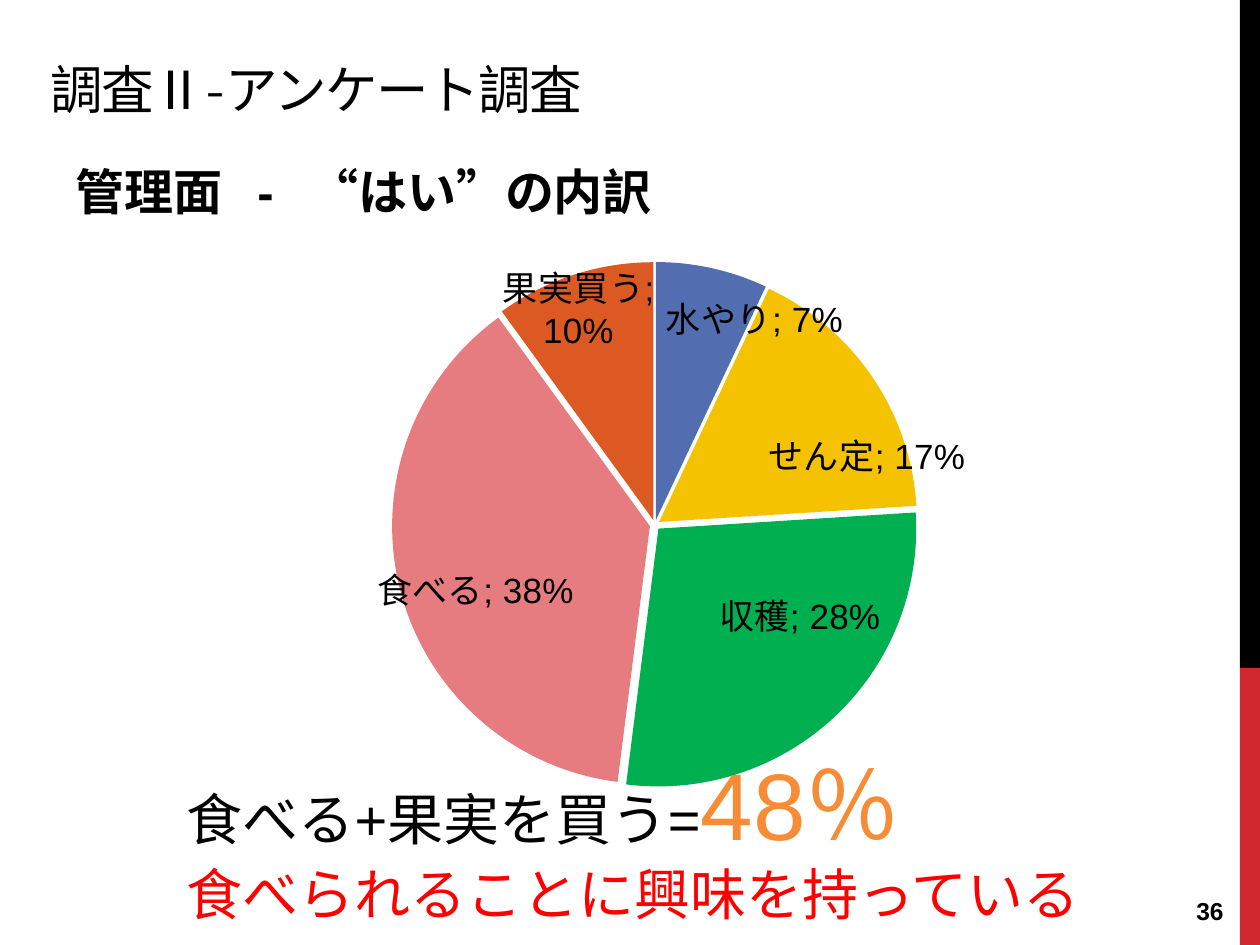
"""Build the survey slide with a pie chart of the "yes" answers."""
from lxml.etree import SubElement
from pptx import Presentation
from pptx.chart.data import CategoryChartData
from pptx.dml.color import RGBColor
from pptx.enum.chart import XL_CHART_TYPE, XL_LABEL_POSITION
from pptx.enum.shapes import MSO_SHAPE
from pptx.enum.text import MSO_ANCHOR, PP_ALIGN
from pptx.oxml import parse_xml
from pptx.oxml.ns import nsdecls, qn
from pptx.util import Pt

PX = 914400 // 126
COLORS = {
    "black": "000000", "crimson": "D1282E", "red": "FF0000", "orange": "F68D36",
    "blue": "526DB0", "yellow": "F5C201", "green": "00B050",
    "pink": "E67C7F", "rust": "DC5924",
}
BARS = [("black", 0, 668), ("crimson", 668, 277)]
BAR_LEFT, BAR_WIDTH = 1240, 20
CHART_BOX = (105, 155, 1081, 668)
PIE_BOX = (392, 262, 526, 526)
SLICES = [
    ("水やり", 7, "blue", (-48, 82)),
    ("せん定", 17, "yellow", (-110, 107)),
    ("収穫", 28, "green", (-121, -133)),
    ("食べる", 38, "pink", (181, -29)),
    ("果実買う", 10, "rust", (83, 84)),
]
TITLE = [[("調査Ⅱ-アンケート調査", 30, "black")]]
SUBTITLE = [[("管理面\t-\t“はい”の内訳", 28, "black")]]
SUBTITLE_TABS = (182, 234)
SUMMARY = [
    [("食べる+果実を買う=", 32, "black"), ("48％", 54, "orange")],
    [("食べられることに興味を持っている", 32, "red")],
]
PAGE_NUMBER = [[("36", 14, "black")]]


def scaled(*lengths):
    return [length * PX for length in lengths]


def color(name):
    return RGBColor.from_string(COLORS[name])


def add_text(page, place, lines, font="Arial", bold=False,
             anchor=MSO_ANCHOR.TOP, align=PP_ALIGN.LEFT, tabs=()):
    frame = page.shapes.add_textbox(*scaled(*place)).text_frame
    frame.word_wrap = True
    frame.vertical_anchor = anchor
    for index, line in enumerate(lines):
        para = frame.add_paragraph() if index else frame.paragraphs[0]
        para.alignment = align
        if tabs:
            stops = SubElement(para._p.get_or_add_pPr(), qn("a:tabLst"))
            for stop in tabs:
                SubElement(stops, qn("a:tab"), pos=str(stop * PX), algn="l")
        para.font.name = font
        para.font.bold = bold
        for text, size, name in line:
            span = para.add_run()
            span.text = text
            span.font.size = Pt(size)
            span.font.color.rgb = color(name)
    return frame


def layout_xml(x, y, w=None, h=None):
    parts = ""
    if w is not None:
        parts = '<c:layoutTarget val="inner"/><c:xMode val="edge"/><c:yMode val="edge"/>'
    for tag, value in zip("xywh", (x, y, w, h)):
        if value is not None:
            parts += f'<c:{tag} val="{value:.4f}"/>'
    return parse_xml(f'<c:layout {nsdecls("c")}><c:manualLayout>{parts}'
                     '</c:manualLayout></c:layout>')


def add_pie(page):
    data = CategoryChartData()
    data.categories = [name for name, *_ in SLICES]
    data.add_series("Series 1", [value for _, value, *_ in SLICES])
    chart = page.shapes.add_chart(XL_CHART_TYPE.PIE, *scaled(*CHART_BOX), data).chart
    chart.has_legend = False
    chart.has_title = False
    chart.font.name = "Arial"
    chart.font.size = Pt(20)
    chart.font.color.rgb = color("black")
    left, top, width, height = CHART_BOX
    pie_left, pie_top, pie_width, pie_height = PIE_BOX

    plot = chart.plots[0]
    plot.vary_by_categories = True
    area = plot._element.getparent()
    for old in area.findall(qn("c:layout")):
        area.remove(old)
    area.insert(0, layout_xml((pie_left - left) / width, (pie_top - top) / height,
                              pie_width / width, pie_height / height))

    series = plot.series[0]
    series._element.find(qn("c:tx")).addnext(
        parse_xml(f'<c:explosion {nsdecls("c")} val="2"/>'))
    for index, (_, _, name, _) in enumerate(SLICES):
        fill = series.points[index].format.fill
        fill.solid()
        fill.fore_color.rgb = color(name)

    labels = series.data_labels
    labels.show_category_name = True
    labels.show_percentage = True
    labels.show_value = False
    labels.position = XL_LABEL_POSITION.OUTSIDE_END
    for index, (_, _, _, (dx, dy)) in enumerate(SLICES):
        series.points[index].data_label.position = XL_LABEL_POSITION.OUTSIDE_END
        label = labels._element.findall(qn("c:dLbl"))[index]
        label.find(qn("c:idx")).addnext(layout_xml(dx / width, dy / height))
        for tag, shown in (("showCatName", "1"), ("showPercent", "1"), ("showVal", "0")):
            label.find(qn(f"c:{tag}")).set("val", shown)
    for label in [*labels._element.findall(qn("c:dLbl")), labels._element]:
        separator = parse_xml(f'<c:separator {nsdecls("c")}>; </c:separator>')
        label.find(qn("c:showBubbleSize")).addnext(separator)


def main():
    deck = Presentation()
    deck.slide_width, deck.slide_height = scaled(1260, 945)
    page = deck.slides.add_slide(deck.slide_layouts[6])
    for name, top, height in BARS:
        bar = page.shapes.add_shape(MSO_SHAPE.RECTANGLE,
                                    *scaled(BAR_LEFT, top, BAR_WIDTH, height))
        bar.shadow.inherit = False
        bar.fill.solid()
        bar.fill.fore_color.rgb = color(name)
        bar.line.fill.background()
    add_pie(page)
    add_text(page, (174, 740, 953, 195), SUMMARY)
    title = add_text(page, (38, 33, 1158, 111), TITLE, font="Montserrat",
                     anchor=MSO_ANCHOR.MIDDLE)
    title.paragraphs[0].runs[0].font._element.set("spc", "-80")
    add_text(page, (63, 155, 1134, 213), SUBTITLE, bold=True, tabs=SUBTITLE_TABS)
    add_text(page, (1160, 886, 76, 50), PAGE_NUMBER, bold=True,
             anchor=MSO_ANCHOR.MIDDLE, align=PP_ALIGN.RIGHT)
    deck.save("out.pptx")


if __name__ == "__main__":
    main()
